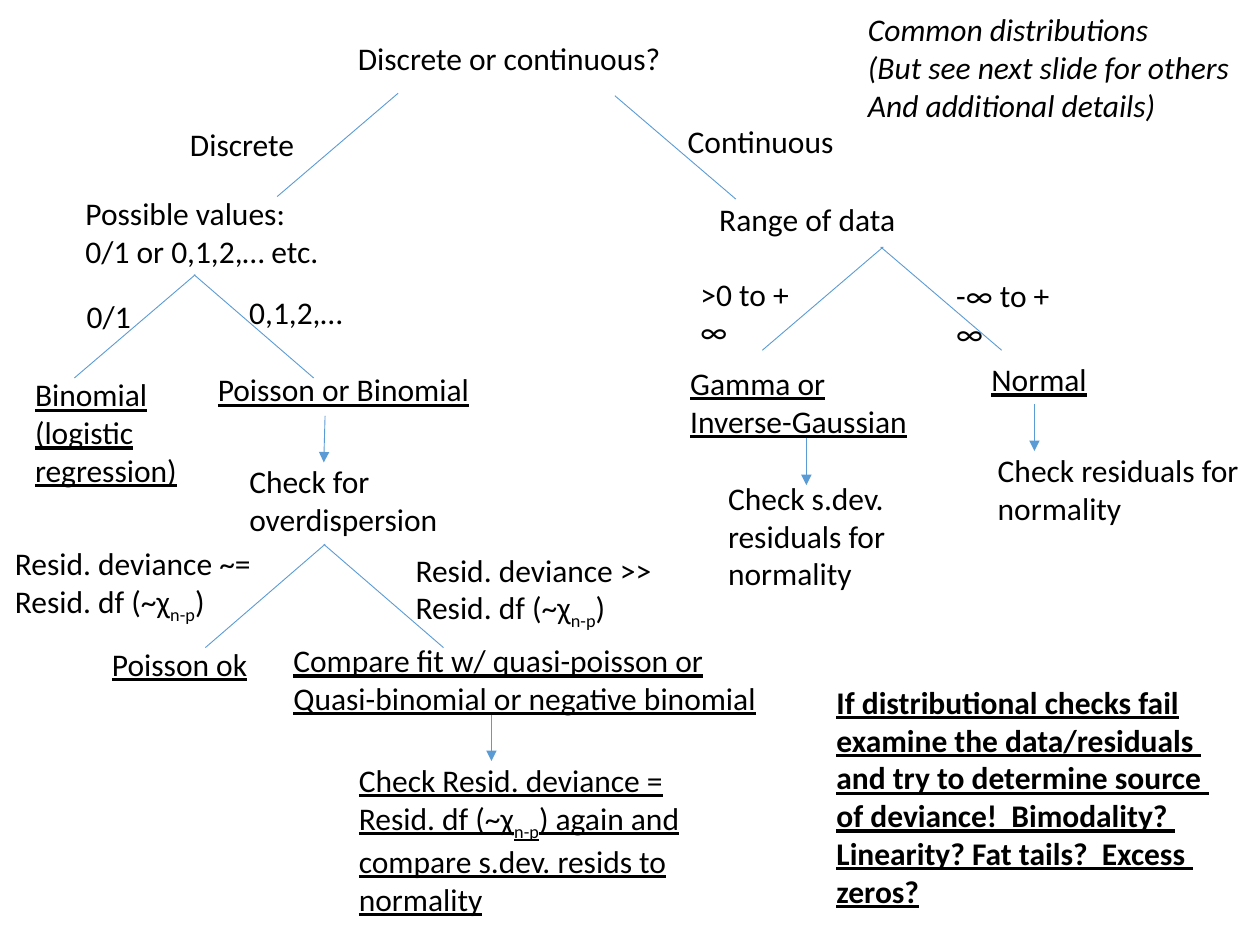
"""Build a decision tree for choosing a data distribution."""
import pptx
import pptx.dml.color
import pptx.enum.shapes
import pptx.enum.text
import pptx.util
from lxml import etree
from pptx.oxml.ns import qn

Inches = pptx.util.Inches
INK = {"text": "000000", "line": "5B9BD5"}
RISE, DROP = 0.82, 0.37

NOTES = [
    (0.58, 1.49, 2.07, 0.71, "", ["Possible values:", "0/1 or 0,1,2,… etc."]),
    (0.18, 2.93, 1.36, 1.01, "u", ["Binomial", "(logistic", "regression)"]),
    (0.59, 2.31, 0.56, 0.4, "", ["0/1"]),
    (5.61, 1.54, 1.62, 0.4, "", ["Range of data"]),
    (7.49, 2.14, 1.15, 0.4, "w", ["-∞ to + ∞"]),
    (1.88, 2.28, 0.96, 0.4, "", ["0,1,2,…"]),
    (1.41, 0.94, 1.04, 0.4, "", ["Discrete"]),
    (5.36, 0.92, 1.37, 0.4, "", ["Continuous"]),
    (1.63, 2.89, 2.22, 0.4, "u", ["Poisson or Binomial"]),
    (7.77, 2.81, 0.97, 0.4, "u", ["Normal"]),
    (5.38, 2.84, 1.94, 0.71, "u", ["Gamma or", "Inverse-Gaussian"]),
    (5.46, 2.13, 1.15, 0.4, "w", [">0 to + ∞"]),
    (1.88, 3.62, 1.71, 0.71, "", ["Check for", "overdispersion"]),
    (0.79, 5.07, 1.29, 0.4, "u", ["Poisson ok"]),
    (0.02, 4.27, 2.1, 0.71, "", ["Resid. deviance ~=", "Resid. df (~χ|n-p|)"]),
    (2.23, 5.04, 3.92, 0.71, "u",
     ["Compare fit w/ quasi-poisson or", "Quasi-binomial or negative binomial"]),
    (3.2, 4.32, 2.1, 0.71, "", ["Resid. deviance >>", "Resid. df (~χ|n-p|)"]),
    (7.82, 3.53, 2.19, 0.71, "", ["Check residuals for", "normality"]),
    (5.68, 3.75, 1.52, 1.01, "", ["Check s.dev.", "residuals for", "normality"]),
    (6.54, 5.37, 3.18, 1.92, "bu",
     ["If distributional checks fail", "examine the data/residuals ",
      "and try to determine source ", "of deviance!  Bimodality? ",
      "Linearity? Fat tails?  Excess ", "zeros?"]),
    (2.75, 5.99, 2.83, 1.31, "u",
     ["Check Resid. deviance =", "Resid. df (~χ|n-p|) again and",
      "compare s.dev. resids to", "normality"]),
    (6.79, 0.03, 3.15, 1.01, "i",
     ["Common distributions", "(But see next slide for others", "And additional details)"]),
]
FORKS = [(3.16, 0.74, -0.96), (4.88, 0.76, 0.96),
         (1.55, 2.18, -0.96), (1.54, 2.18, 0.95),
         (7.01, 1.96, -0.96), (6.99, 1.96, 0.96),
         (2.58, 4.32, -0.95), (2.57, 4.32, 0.95)]
ARROWS = [(2.58, 3.3, -0.01), (8.21, 3.21, 0), (6.4, 3.48, 0), (3.9, 5.67, 0)]


def add_run(para, text, style, sub):
    """Add one run, lowered when it is a subscript."""
    run = para.add_run()
    run.text = text
    font = run.font
    font.name, font.size = "Calibri", pptx.util.Pt(18)
    font.color.rgb = pptx.dml.color.RGBColor.from_string(INK["text"])
    font.bold, font.italic, font.underline = ("b" in style, "i" in style, "u" in style)
    if sub:
        font._element.set("baseline", "-25000")


def fill_text(shape, rows, style):
    """Write rows as paragraphs; bars enclose subscripts."""
    frame = shape.text_frame
    frame.word_wrap = "w" in style
    frame.vertical_anchor = pptx.enum.text.MSO_ANCHOR.TOP
    frame.auto_size = (pptx.enum.text.MSO_AUTO_SIZE.NONE if "w" in style
                       else pptx.enum.text.MSO_AUTO_SIZE.SHAPE_TO_FIT_TEXT)
    for num, row in enumerate(rows):
        para = frame.add_paragraph() if num else frame.paragraphs[0]
        para.alignment = pptx.enum.text.PP_ALIGN.LEFT
        for part, text in enumerate(row.split("|")):
            add_run(para, text, style, part % 2 == 1)


def add_title(slide, text):
    """Move the title to the root of the tree."""
    title = slide.shapes.title
    title.left, title.top = Inches(2.74), Inches(0.26)
    title.width, title.height = Inches(2.63), Inches(0.4)
    fill_text(title, [text], "")


def add_note(slide, left, top, width, height, style, rows):
    """Add a text box to the tree."""
    box = slide.shapes.add_textbox(*map(Inches, (left, top, width, height)))
    fill_text(box, rows, style)


def add_line(slide, left, top, run, drop, head=False):
    """Draw a thin line downward, with an arrowhead if asked."""
    line = slide.shapes.add_connector(
        pptx.enum.shapes.MSO_CONNECTOR.STRAIGHT,
        *map(Inches, (left, top, left + run, top + drop)))
    line.line.color.rgb = pptx.dml.color.RGBColor.from_string(INK["line"])
    line.line.width = pptx.util.Pt(0.5)
    if head:
        etree.SubElement(line.line._get_or_add_ln(), qn("a:tailEnd"), type="triangle")
    etree.SubElement(line._element.spPr, qn("a:effectLst"))


def main():
    """Build and save the slide."""
    deck = pptx.Presentation()
    deck.slide_width, deck.slide_height = Inches(10), Inches(7.5)
    slide = deck.slides.add_slide(deck.slide_layouts[5])
    add_title(slide, "Discrete or continuous?")
    for left, top, run in FORKS:
        add_line(slide, left, top, run, RISE)
    for left, top, run in ARROWS:
        add_line(slide, left, top, run, DROP, head=True)
    for note in NOTES:
        add_note(slide, *note)
    deck.save("out.pptx")


if __name__ == "__main__":
    main()
